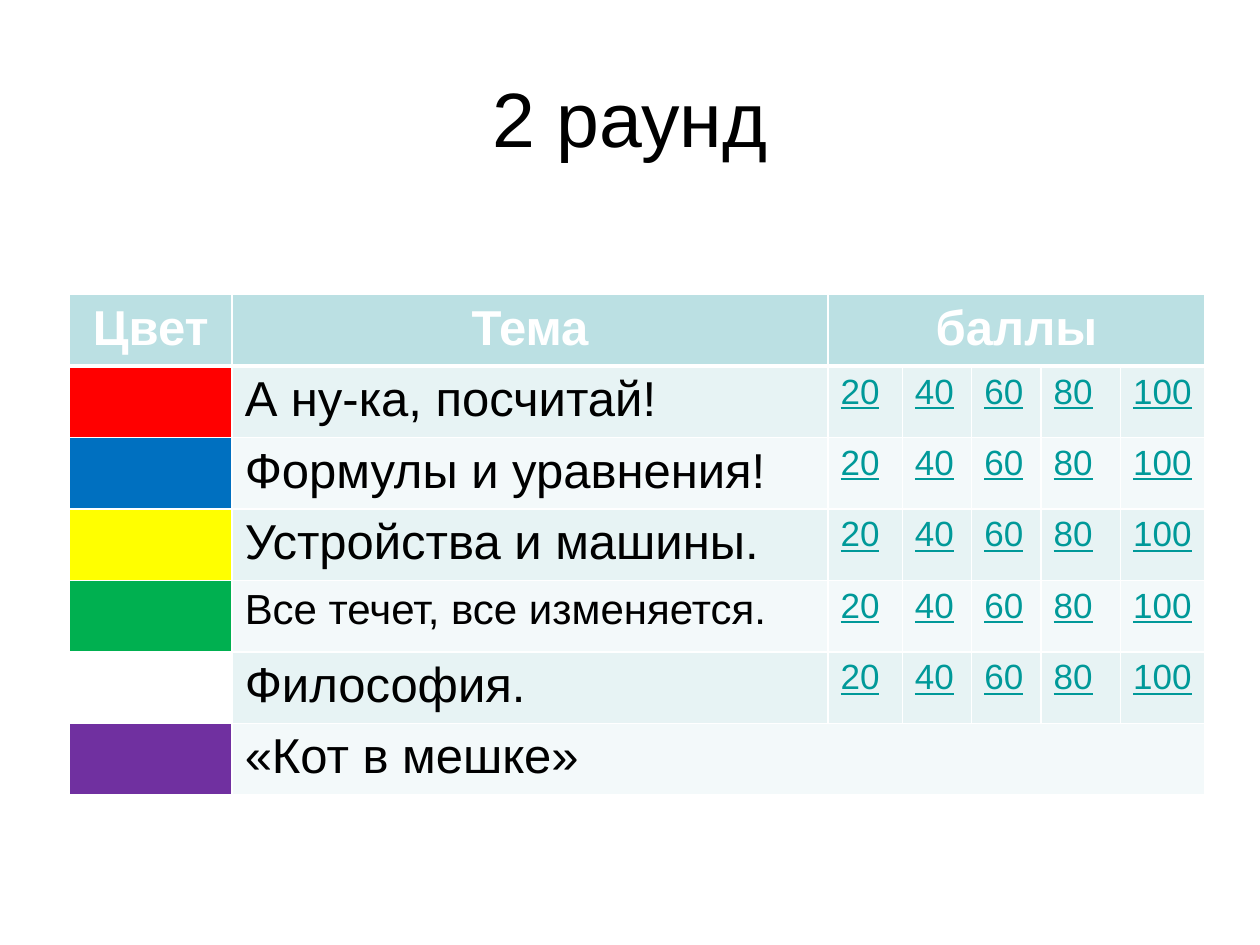
from lxml import etree
from pptx import Presentation
from pptx.dml.color import RGBColor
from pptx.enum.text import MSO_ANCHOR, PP_ALIGN
from pptx.oxml.ns import qn
from pptx.util import Cm, Pt

LEFT, CENTER = PP_ALIGN.LEFT, PP_ALIGN.CENTER
MIDDLE = MSO_ANCHOR.MIDDLE
COL_WIDTHS = [3.28, 12.01, 1.5, 1.4, 1.4, 1.6, 1.7]
ROW_HEIGHT = 1.44
POINTS = ["20", "40", "60", "80", "100"]
TOPICS = [
    ("FF0000", "А ну-ка, посчитай!", 28),
    ("0070C0", "Формулы и уравнения!", 28),
    ("FFFF00", "Устройства и машины.", 28),
    ("00B050", "Все течет, все изменяется.", 24),
    ("FFFFFF", "Философия.", 28),
    ("7030A0", "«Кот в мешке»", 28),
]


def rgb(value):
    """Return the colour for a hex string."""
    return RGBColor.from_string(value)


def put_text(tf, text, size=28, color="000000", bold=False, underline=False, align=LEFT):
    """Write one formatted line into a text frame."""
    p = tf.paragraphs[0]
    p.alignment = align
    r = p.add_run()
    r.text = text
    r.font.name = "Arial"
    r.font.size = Pt(size)
    r.font.bold = bold
    r.font.underline = underline
    r.font.color.rgb = rgb(color)


class Deck:
    """Holds the style and the current slide."""

    header, bands, line, link = "BBE0E3", ("E7F3F4", "F3F9FA"), "FFFFFF", "009999"

    def __init__(self, prs):
        """Start a title-only slide."""
        self.s = prs.slides.add_slide(prs.slide_layouts[5])

    def title(self, text, left, top, width, height):
        """Place and fill the title placeholder."""
        sp = self.s.shapes.title
        sp.left, sp.top, sp.width, sp.height = Cm(left), Cm(top), Cm(width), Cm(height)
        sp.text_frame.vertical_anchor = MIDDLE
        put_text(sp.text_frame, text, size=44, align=CENTER)

    def table(self, rows, left, top):
        """Add an empty table with the set column widths."""
        sp = self.s.shapes.add_table(rows, len(COL_WIDTHS), Cm(left), Cm(top),
                                     Cm(sum(COL_WIDTHS)), Cm(rows * ROW_HEIGHT))
        for col, width in zip(sp.table.columns, COL_WIDTHS):
            col.width = Cm(width)
        for row in sp.table.rows:
            row.height = Cm(ROW_HEIGHT)
        return sp.table

    def cell(self, cell, fill, bottom=1, top=1):
        """Set the borders and fill of a cell."""
        tc_pr = cell._tc.get_or_add_tcPr()
        for side, width in zip("LRTB", (1, 1, top, bottom)):
            ln = etree.SubElement(tc_pr, qn(f"a:ln{side}"), w=str(Pt(width)))
            solid = etree.SubElement(ln, qn("a:solidFill"))
            etree.SubElement(solid, qn("a:srgbClr"), val=self.line)
        cell.fill.solid()
        cell.fill.fore_color.rgb = rgb(fill)

    def score_table(self, left, top):
        """Add the table of topics and their points."""
        table = self.table(len(TOPICS) + 1, left, top)
        for c in range(len(COL_WIDTHS)):
            self.cell(table.cell(0, c), self.header, bottom=3)
        for c, text in enumerate(["Цвет", "Тема", "баллы"]):
            put_text(table.cell(0, c).text_frame, text, color=self.line, bold=True, align=CENTER)
        table.cell(0, 2).merge(table.cell(0, 6))

        for i, (color, topic, size) in enumerate(TOPICS, 1):
            band = self.bands[(i - 1) % 2]
            for c in range(len(COL_WIDTHS)):
                self.cell(table.cell(i, c), band if c else color, top=3 if i == 1 else 1)
            put_text(table.cell(i, 1).text_frame, topic, size=size)
            if i == len(TOPICS):
                table.cell(i, 1).merge(table.cell(i, 6))
                continue
            for c, points in enumerate(POINTS, 2):
                put_text(table.cell(i, c).text_frame, points, size=20, color=self.link, underline=True)


def main():
    """Build and save the slide."""
    prs = Presentation()
    prs.slide_width, prs.slide_height = Cm(25.4), Cm(19.05)
    deck = Deck(prs)
    deck.title("2 раунд", 1.27, 0.76, 22.86, 3.18)
    deck.score_table(1.4, 5.94)
    prs.save("out.pptx")


if __name__ == "__main__":
    main()
